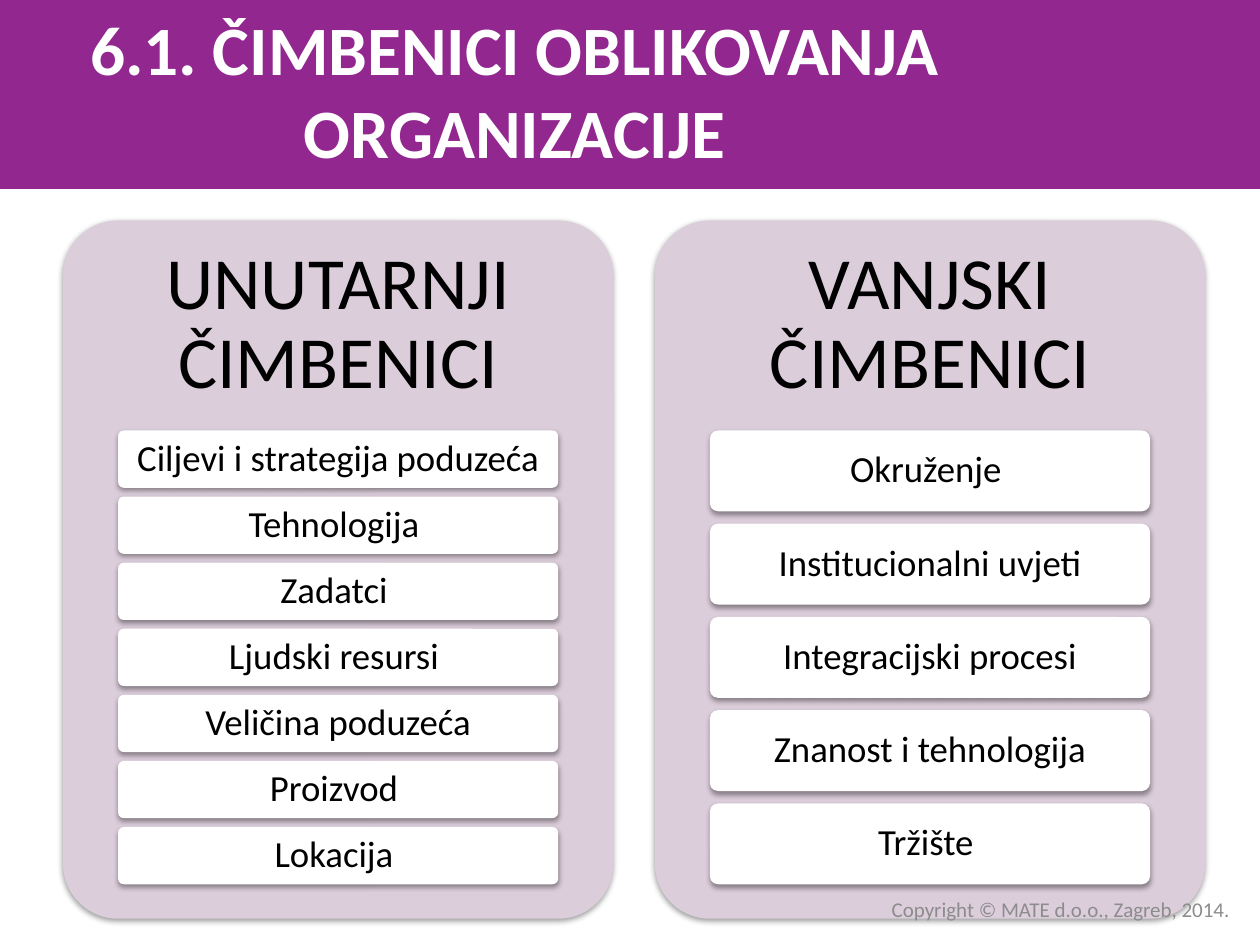
import pptx
import pptx.dml.color
import pptx.enum.shapes
import pptx.enum.text
import pptx.oxml
import pptx.oxml.ns
import pptx.util

Pt = pptx.util.Pt
ALIGN = pptx.enum.text.PP_ALIGN
SHAPE = pptx.enum.shapes.MSO_SHAPE


def color(value):
    return pptx.dml.color.RGBColor.from_string(value)


def set_attrs(obj, values):
    for name, value in values.items():
        setattr(obj, name, value)


class Deck:
    FONT = "Calibri"
    PURPLE, LILAC, WHITE, BLACK, GREY = "92278F", "DCCDDB", "FFFFFF", "000000", "8C8C8C"
    SHADOW = (
        f'<a:outerShdw {pptx.oxml.ns.nsdecls("a")} blurRad="{Pt(3.1)}" dist="{Pt(1.6)}" '
        'dir="5400000" rotWithShape="0"><a:srgbClr val="000000">'
        '<a:alpha val="38000"/></a:srgbClr></a:outerShdw>'
    )

    def __init__(self, width, height):
        self.prs = pptx.Presentation()
        set_attrs(self.prs, {"slide_width": Pt(width), "slide_height": Pt(height)})
        self.s = self.prs.slides.add_slide(self.prs.slide_layouts[5])

    def fill_text(self, sp, text, size, fill, inset=(7.2, 3.6), align=ALIGN.CENTER,
                  spacing=None, bold=False):
        x, y = (Pt(v) for v in inset)
        tf = sp.text_frame
        set_attrs(tf, {
            "word_wrap": True,
            "auto_size": pptx.enum.text.MSO_AUTO_SIZE.NONE,
            "vertical_anchor": pptx.enum.text.MSO_ANCHOR.MIDDLE,
            "margin_left": x, "margin_right": x, "margin_top": y, "margin_bottom": y,
        })
        p = tf.paragraphs[0]
        set_attrs(p, {"alignment": align, "line_spacing": spacing})
        r = p.add_run()
        r.text = text
        set_attrs(r.font, {"name": self.FONT, "size": Pt(size), "bold": bold})
        r.font.color.rgb = color(fill)

    def box(self, kind, at, fill):
        sp = self.s.shapes.add_shape(kind, *(Pt(v) for v in at))
        sp.fill.solid()
        sp.fill.fore_color.rgb = color(fill)
        sp.line.fill.background()
        sp.shadow.inherit = False
        return sp

    def card(self, at, fill):
        sp = self.box(SHAPE.ROUNDED_RECTANGLE, at, fill)
        sp.adjustments[0] = 0.1
        effects = sp._element.spPr.find(pptx.oxml.ns.qn("a:effectLst"))
        effects.append(pptx.oxml.parse_xml(self.SHADOW))
        return sp

    def text(self, at, text, size, fill, **style):
        sp = self.s.shapes.add_textbox(*(Pt(v) for v in at))
        self.fill_text(sp, text, size, fill, **style)

    def title(self, at, text):
        sp = self.s.shapes.title
        set_attrs(sp, dict(zip(("left", "top", "width", "height"), map(Pt, at))))
        self.fill_text(sp, text, 39.6, self.WHITE, bold=True)
        self.s.shapes._spTree.append(sp._element)  # bring in front of the band

    def panel(self, left, heading, items):
        top, width = 126, 314.5
        self.card((left, top, width, 399), self.LILAC)
        self.text((left, top, width, 119.7), heading, 42, self.BLACK,
                  inset=(12.6, 12.6), spacing=0.9)
        # Items share a fixed height; each gap is 2/13 of an item
        gap_ratio = 2 / 13
        height = 259.3 / (len(items) + (len(items) - 1) * gap_ratio)
        for i, item in enumerate(items):
            y = 246 + i * height * (1 + gap_ratio)
            sp = self.card((left + 31.5, y, 251.5, height), self.WHITE)
            self.fill_text(sp, item, 21, self.BLACK, inset=(5, 3.6), spacing=0.9)


def main():
    deck = Deck(720, 540)

    # Header band
    deck.box(SHAPE.RECTANGLE, (0, 0, 720, 108), deck.PURPLE)

    # Two panels of factors
    panels = [
        ("UNUTARNJI ČIMBENICI",
         ["Ciljevi i strategija poduzeća", "Tehnologija ", "Zadatci ", "Ljudski resursi ",
          "Veličina poduzeća", "Proizvod ", "Lokacija "]),
        ("VANJSKI ČIMBENICI",
         ["Okruženje ", "Institucionalni uvjeti", "Integracijski procesi",
          "Znanost i tehnologija", "Tržište "]),
    ]
    for i, (heading, items) in enumerate(panels):
        deck.panel(36 + i * 338.2, heading, items)

    # Title and footer
    deck.title((0, 6, 588, 90), "6.1. ČIMBENICI OBLIKOVANJA ORGANIZACIJE")
    deck.text((337.5, 508.5, 372.5, 21.6), "Copyright © MATE d.o.o., Zagreb, 2014.",
              12, deck.GREY, align=ALIGN.RIGHT)

    deck.prs.save("out.pptx")


if __name__ == "__main__":
    main()
